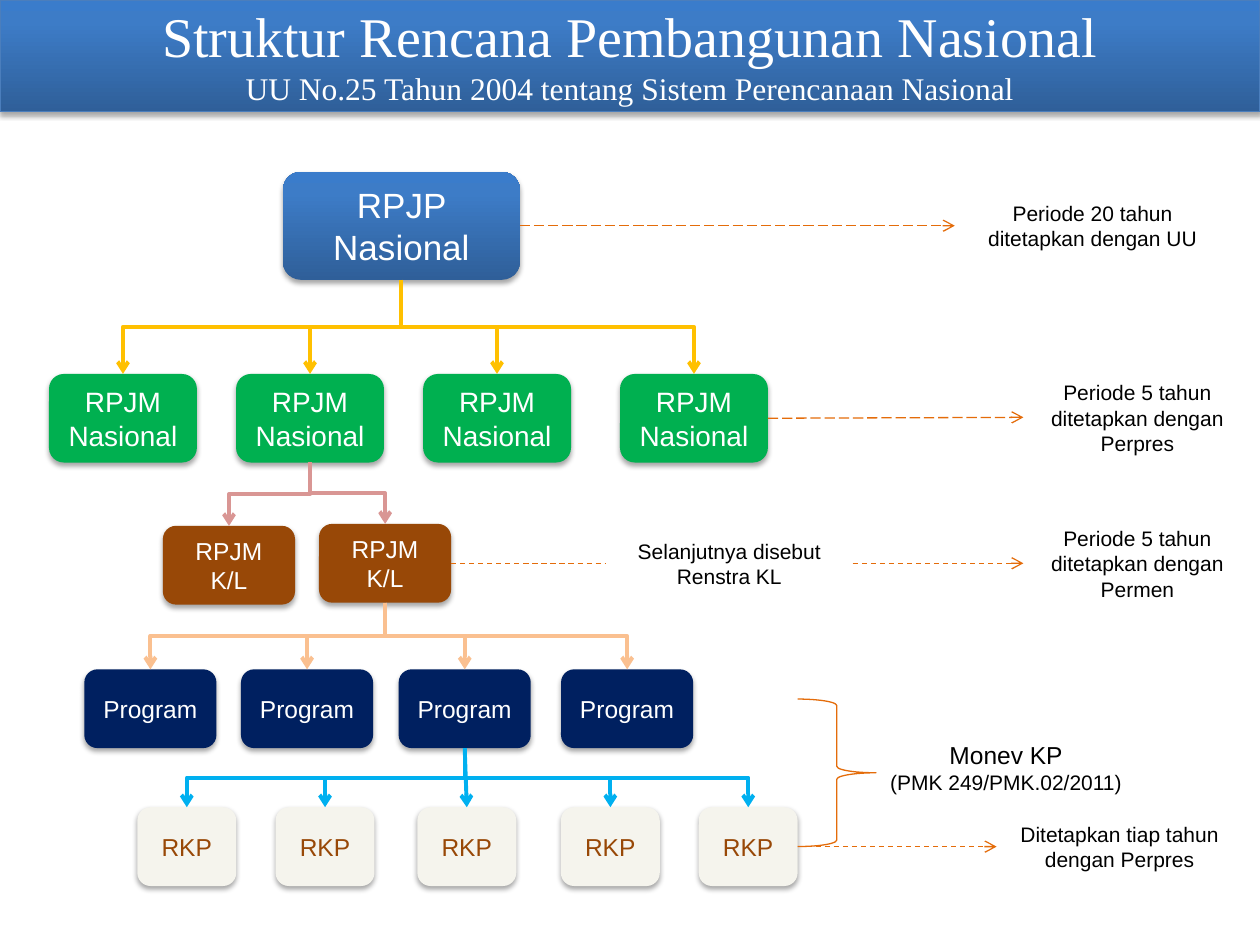
"""Build the slide on the structure of the national development plan."""
from copy import deepcopy
from dataclasses import dataclass

from pptx import Presentation
from pptx.dml.color import RGBColor
from pptx.enum.dml import MSO_LINE
from pptx.enum.shapes import MSO_CONNECTOR, MSO_SHAPE
from pptx.enum.text import MSO_ANCHOR, PP_ALIGN
from pptx.oxml import parse_xml
from pptx.oxml.ns import nsdecls, qn
from pptx.util import Pt

STRAIGHT, ELBOW = MSO_CONNECTOR.STRAIGHT, MSO_CONNECTOR.ELBOW
RECTANGLE, ROUNDED, BRACE = MSO_SHAPE.RECTANGLE, MSO_SHAPE.ROUNDED_RECTANGLE, MSO_SHAPE.RIGHT_BRACE
DASH, LONG_DASH = MSO_LINE.DASH, MSO_LINE.LONG_DASH
CENTER, MIDDLE = PP_ALIGN.CENTER, MSO_ANCHOR.MIDDLE


@dataclass(frozen=True)
class Theme:
    white: str = "FFFFFF"
    black: str = "000000"
    banner_edge: str = "4B7EBC"
    gradient: tuple = ((0, "2F5F99"), (0.8, "3D7CC7"), (1, "3A7CCB"))
    green: str = "00B050"
    brown: str = "984807"
    navy: str = "002060"
    cream: str = "F5F4ED"
    gold: str = "FFC000"
    rose: str = "D99694"
    peach: str = "FAC090"
    sky: str = "00B0F0"
    orange: str = "E46C0A"
    body_font: str = "Arial"
    title_font: str = "Times New Roman"
    title: int = 32
    subtitle: int = 18
    top: int = 20
    plan: int = 16
    unit: int = 14
    note: int = 12
    thin: float = 0.75
    thick: float = 2.25


THEME = Theme()


def write_text(frame, lines, sizes, color, font=THEME.body_font, one_para=False):
    frame.word_wrap = True
    frame.vertical_anchor = MIDDLE
    para = frame.paragraphs[0]
    for index, (line, size) in enumerate(zip(lines, sizes)):
        if index and one_para:
            para.add_line_break()
        elif index:
            para = frame.add_paragraph()
        para.alignment = CENTER
        span = para.add_run()
        span.text = line
        span.font.size = Pt(size)
        span.font.name = font
        span.font.color.rgb = RGBColor.from_string(color)


class Page:
    def __init__(self, slide, theme):
        self.slide = slide
        self.theme = theme

    def shape(self, kind, left, top, width, height):
        shape = self.slide.shapes.add_shape(kind, Pt(left), Pt(top), Pt(width), Pt(height))
        shape.shadow.inherit = False
        return shape

    def outline(self, item, color, width):
        item.line.color.rgb = RGBColor.from_string(color)
        item.line.width = Pt(width)

    def box(self, kind, left, top, width, height, fill=None):
        box = self.shape(kind, left, top, width, height)
        box.line.fill.background()
        if fill:
            box.fill.solid()
            box.fill.fore_color.rgb = RGBColor.from_string(fill)
        else:
            self.gradient(box)
        effects = box.element.spPr.find(qn("a:effectLst"))
        effects.append(parse_xml(
            f'<a:outerShdw {nsdecls("a")} blurRad="{Pt(3.1)}" dist="{Pt(1.8)}" dir="5400000" '
            f'rotWithShape="0"><a:srgbClr val="{self.theme.black}"><a:alpha val="35000"/>'
            '</a:srgbClr></a:outerShdw>'))
        return box

    def gradient(self, box):
        box.fill.gradient()
        box.fill.gradient_angle = 90
        stops = box.element.spPr.find(".//" + qn("a:gsLst"))
        stops.append(deepcopy(stops[0]))
        for stop, (position, color) in zip(box.fill.gradient_stops, self.theme.gradient):
            stop.position = position
            stop.color.rgb = RGBColor.from_string(color)

    def row(self, lefts, top, width, height, fill, lines, size, color=THEME.white):
        boxes = [self.box(ROUNDED, left, top, width, height, fill) for left in lefts]
        for box in boxes:
            write_text(box.text_frame, lines, [size] * len(lines), color)
        return boxes

    def text(self, left, top, width, height, lines, sizes, **style):
        box = self.slide.shapes.add_textbox(Pt(left), Pt(top), Pt(width), Pt(height))
        write_text(box.text_frame, lines, sizes, **style)

    def note(self, left, top, width, height, *lines, sizes=(THEME.note,)):
        self.text(left, top, width, height, lines, sizes, color=self.theme.black)

    def line(self, kind, start, end, color, width, dash=None, arrow=True):
        line = self.slide.shapes.add_connector(kind, *(Pt(value) for value in (*start, *end)))
        self.outline(line, color, width)
        if dash:
            line.line.dash_style = dash
        properties = line.element.spPr
        if arrow:
            tail = parse_xml(f'<a:tailEnd {nsdecls("a")} type="arrow"/>')
            properties.find(qn("a:ln")).append(tail)
        properties.append(parse_xml(f'<a:effectLst {nsdecls("a")}/>'))
        return line

    def pointer(self, start, end, dash=DASH, arrow=True):
        self.line(STRAIGHT, start, end, self.theme.orange, self.theme.thin, dash, arrow)

    def branch(self, parent, children, color):
        x1 = parent.left.pt + parent.width.pt / 2
        y1 = parent.top.pt + parent.height.pt
        for child in children:
            x2, y2 = child.left.pt + child.width.pt / 2, child.top.pt
            if abs(x2 - x1) < 2:
                self.line(STRAIGHT, (x1, y1), (x2, y2), color, self.theme.thick)
                continue
            rightward = x2 > x1
            middle_x, middle_y = (x1 + x2) / 2, (y1 + y2) / 2
            reach, half = (y2 - y1) / 2 * (-1 if rightward else 1), abs(x2 - x1) / 2
            line = self.line(ELBOW, (middle_x - reach, middle_y - half),
                             (middle_x + reach, middle_y + half), color, self.theme.thick)
            line.element.spPr.find(qn("a:xfrm")).set("rot", "16200000" if rightward else "5400000")

    def brace(self, left, top, width, height):
        brace = self.shape(BRACE, left, top, width, height)
        brace.fill.background()
        self.outline(brace, self.theme.orange, self.theme.thin)


def main():
    deck = Presentation()
    deck.slide_width, deck.slide_height = Pt(720), Pt(540)
    theme = THEME
    page = Page(deck.slides.add_slide(deck.slide_layouts[6]), theme)

    banner = page.box(RECTANGLE, 0, 0, 720, 63.8)
    page.outline(banner, theme.banner_edge, theme.thin)
    page.text(8.4, 1.5, 703.2, 59, ["Struktur Rencana Pembangunan Nasional",
              "UU No.25 Tahun 2004 tentang Sistem Perencanaan Nasional"],
              [theme.title, theme.subtitle], color=theme.white, font=theme.title_font, one_para=True)

    long_term = page.row([161.7], 98.2, 135.4, 61.7, None, ["RPJP Nasional"], theme.top)[0]
    medium_term = page.row([28, 134.9, 241.8, 354.3], 213.7, 84.5, 50.6, theme.green,
                           ["RPJM", "Nasional"], theme.plan)
    page.branch(long_term, medium_term, theme.gold)

    ministries = [page.row([left], top, 75.5, 45, theme.brown, ["RPJM", "K/L"], theme.unit)[0]
                  for left, top in ((93.1, 300.5), (182.3, 299.4))]
    page.branch(medium_term[1], ministries, theme.rose)

    programs = page.row([48.2, 137.7, 227.8, 320.6], 382.5, 75.5, 45, theme.navy,
                        ["Program"], theme.unit)
    page.branch(ministries[1], programs, theme.peach)

    work_plans = page.row([78.5, 157.5, 238.5, 320.5, 399.3], 461.3, 56.5, 45, theme.cream,
                          ["RKP"], theme.unit, theme.brown)
    page.branch(programs[2], work_plans, theme.sky)

    page.note(545.6, 103.7, 157.5, 50.6, "Periode 20 tahun ditetapkan dengan UU")
    page.note(584.8, 216.7, 130.3, 44, "Periode 5 tahun ditetapkan dengan Perpres")
    page.note(584.8, 294.5, 130.3, 55, "Periode 5 tahun ditetapkan dengan Permen")
    page.note(346.5, 302.6, 140.6, 39, "Selanjutnya disebut Renstra KL")
    page.note(569.5, 458.8, 140.6, 50, "Ditetapkan tiap tahun dengan Perpres")
    page.note(497.5, 422, 154.8, 33, "Monev KP", "(PMK 249/PMK.02/2011)",
              sizes=(theme.unit, theme.note))

    page.pointer((297, 129), (545.6, 129), LONG_DASH)
    page.pointer((438.8, 239), (584.8, 238.5), LONG_DASH)
    page.pointer((257.8, 321.9), (346.5, 321.9), arrow=False)
    page.pointer((487.3, 321.9), (584.8, 321.9))
    page.pointer((455.8, 483.8), (569.5, 483.8))
    page.brace(455.8, 399.5, 44.7, 84.3)

    deck.save("out.pptx")


if __name__ == "__main__":
    main()
